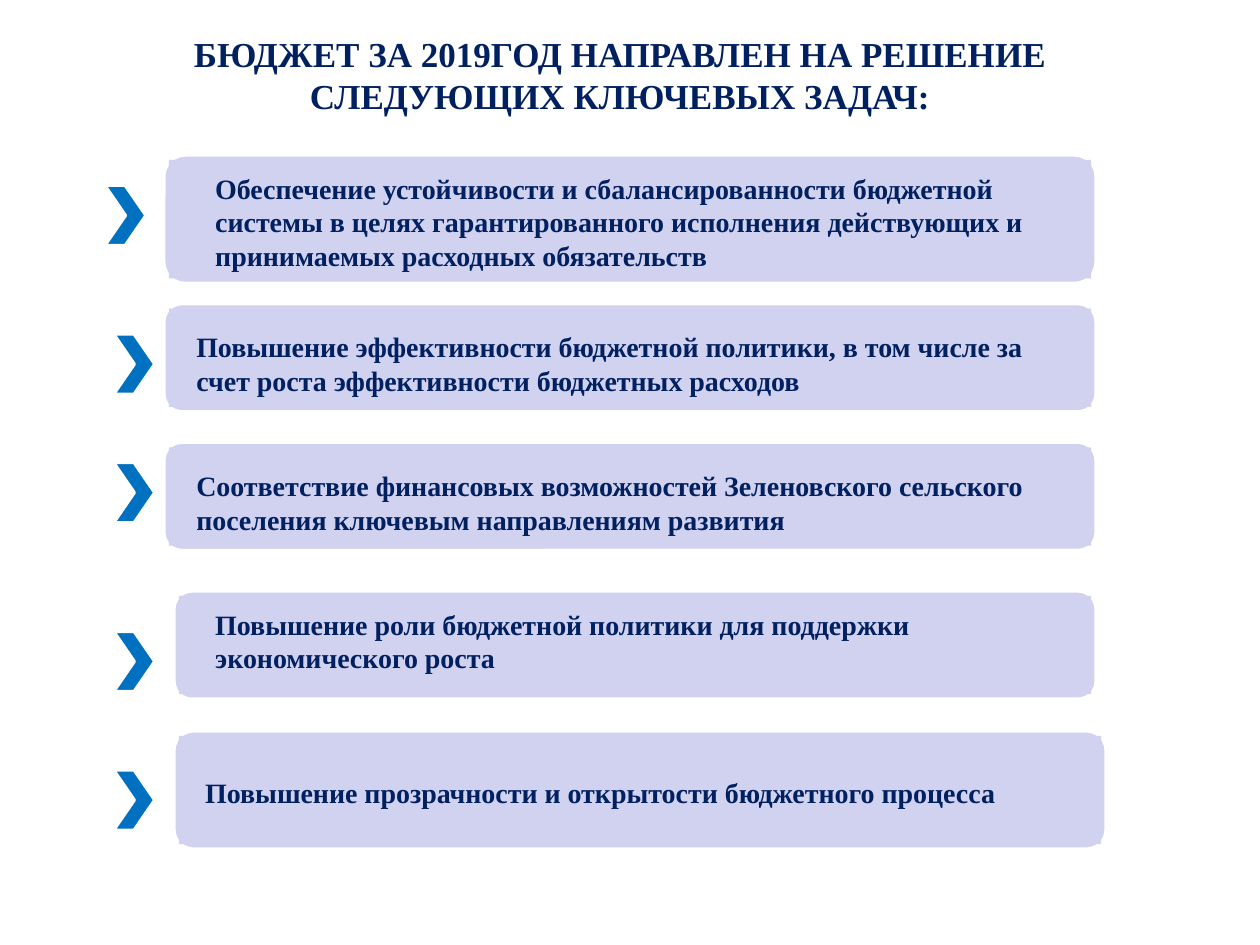
"""Build a slide listing the key tasks of the 2019 budget."""
from pptx import Presentation
from pptx.dml.color import RGBColor
from pptx.enum.shapes import MSO_SHAPE as Shape
from pptx.enum.text import MSO_ANCHOR as Anchor, MSO_AUTO_SIZE as AutoSize, PP_ALIGN as Align
from pptx.util import Inches, Pt

TITLE = "БЮДЖЕТ ЗА 2019ГОД НАПРАВЛЕН НА РЕШЕНИЕ СЛЕДУЮЩИХ КЛЮЧЕВЫХ ЗАДАЧ:"
TASKS = [
    {"text": "Обеспечение устойчивости и сбалансированности бюджетной системы в целях "
             "гарантированного исполнения действующих и принимаемых расходных обязательств",
     "card": (1.3, 1.23, 7.4, 1.02), "label": (1.61, 1.31, 6.93, 0.9), "arrow": (0.83, 1.47)},
    {"text": "Повышение эффективности бюджетной политики, в том числе за счет роста "
             "эффективности бюджетных расходов",
     "card": (1.3, 2.41, 7.4, 0.86), "label": (1.46, 2.57, 6.85, 0.64), "arrow": (0.9, 2.65)},
    {"text": "Соответствие финансовых возможностей Зеленовского сельского поселения "
             "ключевым направлениям развития",
     "card": (1.3, 3.51, 7.4, 0.86), "label": (1.46, 3.67, 7.16, 0.64), "arrow": (0.9, 3.67)},
    {"text": "Повышение роли бюджетной политики для поддержки экономического роста",
     "card": (1.38, 4.69, 7.32, 0.86), "label": (1.61, 4.77, 6.55, 0.64), "arrow": (0.9, 5.01)},
    {"text": "Повышение прозрачности и открытости бюджетного процесса",
     "card": (1.38, 5.8, 7.4, 0.94), "label": (1.53, 6.11, 6.91, 0.37), "arrow": (0.9, 6.11)},
]
COLORS = {"text": "002060", "card": "D1D1F0", "arrow": "0070C0", "outline": "FFFFFF"}
FONT = "Times New Roman"
ARROW_SIZE = (0.33, 0.48)
INSET = 0.04


def color(name):
    """Return the named palette colour."""
    return RGBColor.from_string(COLORS[name])


def write(box, text, size=16, align=Align.LEFT):
    """Fill a box with bold text."""
    frame = box.text_frame
    frame.word_wrap = True
    frame.auto_size = AutoSize.NONE
    frame.vertical_anchor = Anchor.TOP
    para = frame.paragraphs[0]
    para.alignment = align
    span = para.add_run()
    span.text = text
    font = span.font
    font.name, font.size, font.bold = FONT, Pt(size), True
    font.color.rgb = color("text")


def draw(parent, kind, place, fill, outlined=True):
    """Add a filled preset shape."""
    shape = parent.add_shape(kind, *map(Inches, place))
    shape.shadow.inherit = False
    shape.fill.solid()
    shape.fill.fore_color.rgb = color(fill)
    if outlined:
        shape.line.color.rgb = color("outline")
        shape.line.width = Pt(2)
    else:
        shape.line.fill.background()
    return shape


def add_task(page, task):
    """Add a card with its arrow and label."""
    left, top, width, height = task["card"]
    group = page.shapes.add_group_shape().shapes
    draw(group, Shape.ROUNDED_RECTANGLE, task["card"], "card")
    inner = (left + INSET, top + INSET, width - 2 * INSET, height - 2 * INSET)
    draw(group, Shape.RECTANGLE, inner, "card", outlined=False)
    draw(page.shapes, Shape.CHEVRON, task["arrow"] + ARROW_SIZE, "arrow")
    write(page.shapes.add_textbox(*map(Inches, task["label"])), task["text"])


def main():
    """Build and save the deck."""
    deck = Presentation()
    deck.slide_width, deck.slide_height = Inches(10), Inches(7.5)
    page = deck.slides.add_slide(deck.slide_layouts[5])
    title = page.shapes.title
    title.left, title.top, title.width, title.height = map(Inches, (0.43, 0.21, 8.98, 0.77))
    write(title, TITLE, size=20, align=Align.CENTER)
    for task in TASKS:
        add_task(page, task)
    deck.save("out.pptx")


if __name__ == "__main__":
    main()
